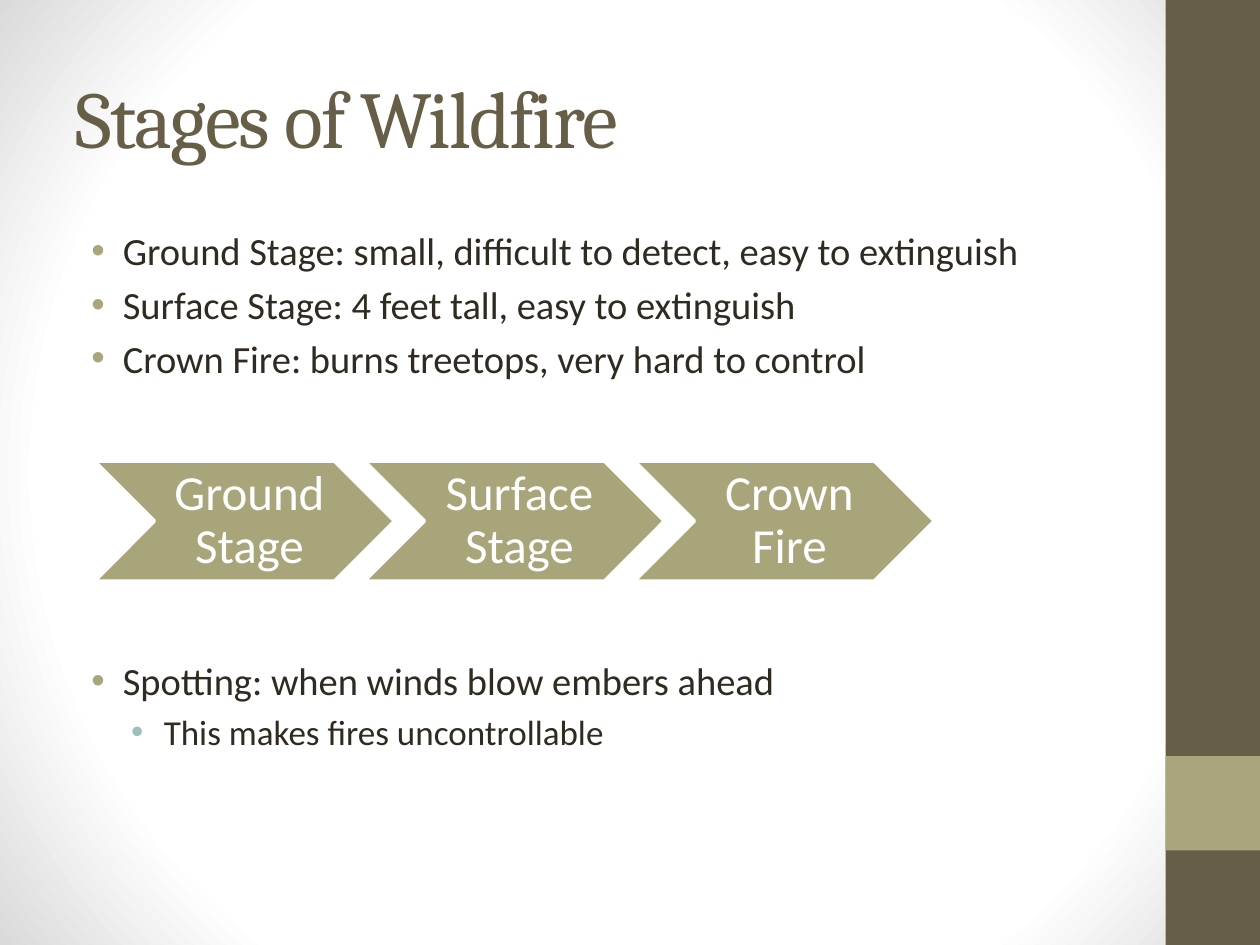
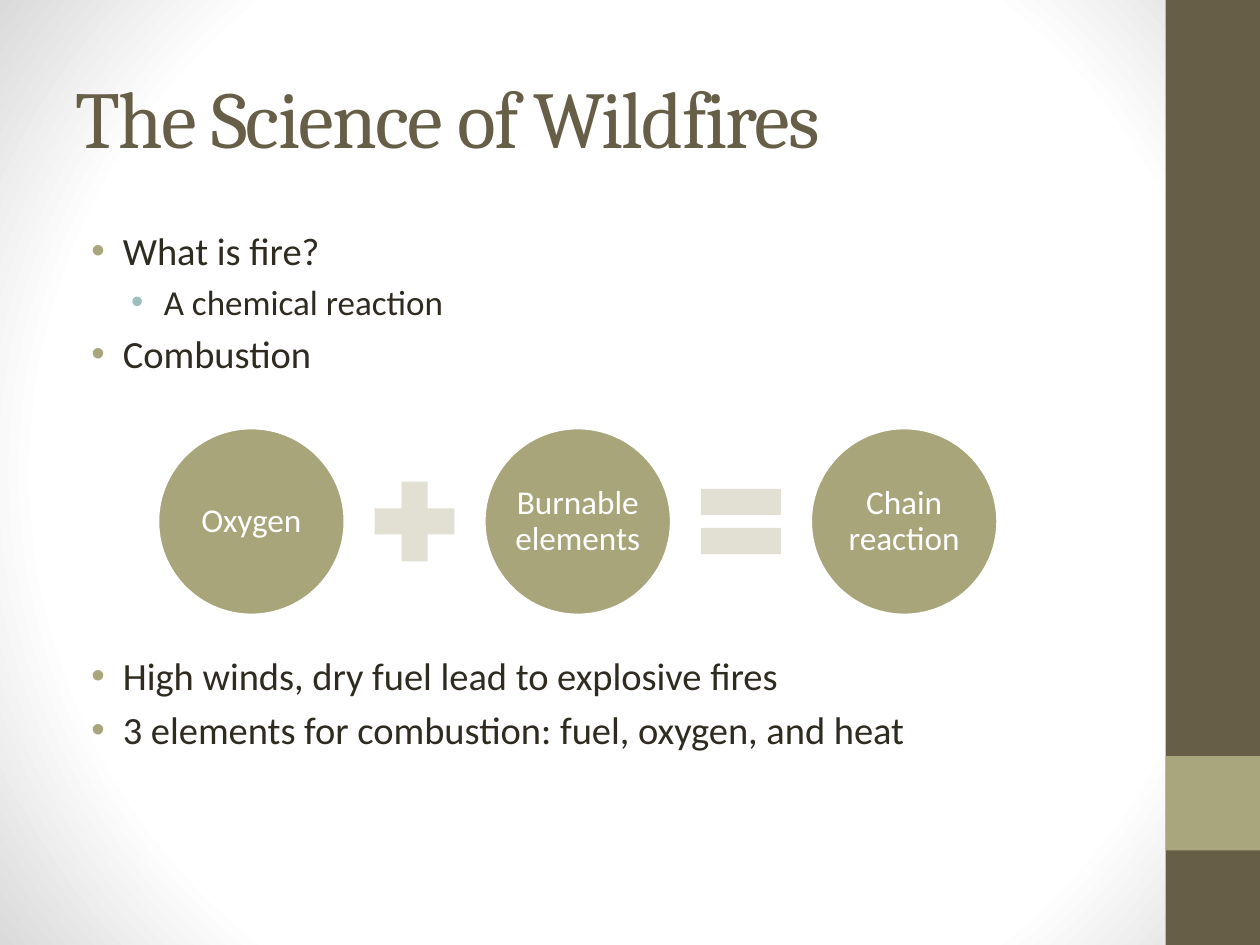
from dataclasses import dataclass

from lxml import etree
from pptx import Presentation
from pptx import util as u
from pptx.dml.color import RGBColor
from pptx.enum import shapes, text
from pptx.oxml import parse_xml
from pptx.oxml.ns import qn

Pt = u.Pt
Kind = shapes.MSO_SHAPE


@dataclass(frozen=True)
class Theme:
    brown: str = "675E47"
    olive: str = "A9A57C"
    diagram: str = "A9A57B"
    operator: str = "E2E0D2"
    ink: str = "2F2B20"
    white: str = "FFFFFF"
    edge_grey: str = "DADADA"
    bullet_colors: tuple = ("A9A57C", "9CBEBD")
    heading_font: str = "Cambria"
    body_font: str = "Calibri"
    title_size: float = 46
    list_sizes: tuple = (22, 20)
    chevron_size: float = 28
    circle_size: float = 19


THEME = Theme()
LIST_INDENTS = ((27, -18), (50.4, -18.7))  # left margin and first line, by level
DIAGRAM_GAP = 158  # space before the first list item below a diagram


def write(para, content, font=THEME.body_font, size=22, color=THEME.ink,
          align=text.PP_ALIGN.LEFT, before=0, after=0, line=1.0, tracking=0):
    """Add one formatted run to a paragraph; tracking is in points."""
    para.alignment = align
    para.space_before, para.space_after = Pt(before), Pt(after)
    para.line_spacing = line
    span = para.add_run()
    span.text = content
    span.font.name, span.font.size = font, Pt(size)
    span.font.color.rgb = RGBColor.from_string(color)
    if tracking:
        span.font._element.set("spc", str(tracking * 100))


def add_bullet(para, level):
    margin, indent = LIST_INDENTS[level]
    para.level = level
    props = para._p.get_or_add_pPr()
    props.set("marL", str(Pt(margin)))
    props.set("indent", str(Pt(indent)))
    color = etree.SubElement(props, qn("a:buClr"))
    etree.SubElement(color, qn("a:srgbClr"), val=THEME.bullet_colors[level])
    etree.SubElement(props, qn("a:buFont"), typeface="Arial")
    etree.SubElement(props, qn("a:buChar"), char="•")


class SlideBuilder:
    """Holds the theme, the deck and the page being built."""

    def __init__(self, theme):
        self.theme = theme
        self.deck = Presentation()
        self.deck.slide_width, self.deck.slide_height = Pt(720), Pt(540)
        self.layout = self.deck.slide_layouts[1]
        self.page = None
        self.place_layout()
        self.paint_background()

    def place_layout(self):
        for index, (top, height) in enumerate([(21.6, 90), (126, 378)]):
            holder = self.layout.placeholders[index]
            holder.left, holder.top = Pt(36), Pt(top)
            holder.width, holder.height = Pt(600), Pt(height)

    def paint_background(self):
        """Give the master a white circular gradient with grey corners."""
        fill = self.deck.slide_master.background.fill
        fill.solid()
        stops = [(0, self.theme.white), (75, self.theme.white), (100, self.theme.edge_grey)]
        stop_xml = "".join(f'<a:gs pos="{percent * 1000}"><a:srgbClr val="{color}"/></a:gs>'
                           for percent, color in stops)
        gradient = parse_xml(
            '<a:gradFill xmlns:a="http://schemas.openxmlformats.org/drawingml/2006/main"'
            f' rotWithShape="1"><a:gsLst>{stop_xml}</a:gsLst><a:path path="circle">'
            '<a:fillToRect l="50000" t="50000" r="50000" b="50000"/></a:path></a:gradFill>')
        solid = self.deck.slide_master.element.find(".//" + qn("p:bgPr")).find(qn("a:solidFill"))
        solid.getparent().replace(solid, gradient)

    def add_master_bands(self):
        """Draw the side bands, then move them behind everything on the master."""
        bands = [self.shape(Kind.RECTANGLE, 666, 0, 54, 540, self.theme.brown),
                 self.shape(Kind.RECTANGLE, 666, 432, 54, 54, self.theme.olive)]
        for position, band in enumerate(bands, start=2):
            self.deck.slide_master.shapes.element.insert(position, band._element)

    def new_page(self, title):
        first = self.page is None
        self.page = self.deck.slides.add_slide(self.layout)
        if first:
            self.add_master_bands()
        frame = self.page.shapes.title.text_frame
        frame.vertical_anchor = text.MSO_ANCHOR.MIDDLE
        frame.auto_size = text.MSO_AUTO_SIZE.NONE
        write(frame.paragraphs[0], title, font=self.theme.heading_font,
              size=self.theme.title_size, color=self.theme.brown, tracking=-1)

    def bullets(self, above, below):
        """Fill the body with (level, text) items around the diagram."""
        frame = self.page.placeholders[1].text_frame
        frame.auto_size = text.MSO_AUTO_SIZE.NONE
        for index, (level, content) in enumerate(above + below):
            para = frame.paragraphs[0] if index == 0 else frame.add_paragraph()
            size = self.theme.list_sizes[level]
            before = DIAGRAM_GAP if index == len(above) else size * 0.2
            write(para, content, size=size, before=before if index else 0)
            add_bullet(para, level)

    def shape(self, kind, left, top, width, height, fill, outline=None, adjustments=()):
        box = self.page.shapes.add_shape(kind, Pt(left), Pt(top), Pt(width), Pt(height))
        box.shadow.inherit = False
        box.fill.solid()
        box.fill.fore_color.rgb = RGBColor.from_string(fill)
        if outline:
            box.line.color.rgb = RGBColor.from_string(outline)
            box.line.width = Pt(2)
        else:
            box.line.fill.background()
        for index, value in enumerate(adjustments):
            box.adjustments[index] = value
        return box

    def label(self, box, content, size, insets):
        frame = box.text_frame
        frame.word_wrap = True
        frame.vertical_anchor = text.MSO_ANCHOR.MIDDLE
        frame.margin_left, frame.margin_top, frame.margin_right, frame.margin_bottom = map(Pt, insets)
        write(frame.paragraphs[0], content, size=size, color=self.theme.white,
              align=text.PP_ALIGN.CENTER, after=size * 0.35, line=0.9)

    def chevrons(self, labels, left=54, top=263.5, width=171.4, height=68.5):
        for index, content in enumerate(labels):
            box = self.shape(Kind.CHEVRON, left + index * width * 0.9, top, width, height,
                             self.theme.diagram, self.theme.white, [0.5])
            self.label(box, content, self.theme.chevron_size, (8.6, 2.9, 2.9, 2.9))

    def equation(self, labels, operators, left=90, middle=298, circle=107.3, sign=62, gap=8.6):
        """Draw circles in a row with an operator sign between neighbours."""
        pitch = circle + sign + 2 * gap
        for index, content in enumerate(labels):
            box = self.shape(Kind.OVAL, left + index * pitch, middle - circle / 2,
                             circle, circle, self.theme.diagram, self.theme.white)
            self.label(box, content, self.theme.circle_size, (1.5,) * 4)
        for index, (kind, adjustments) in enumerate(operators):
            self.shape(kind, left + index * pitch + circle + gap, middle - sign / 2,
                       sign, sign, self.theme.operator, adjustments=adjustments)


def main():
    builder = SlideBuilder(THEME)

    builder.new_page("Stages of Wildfire")
    builder.bullets(
        above=[(0, "Ground Stage: small, difficult to detect, easy to extinguish"),
               (0, "Surface Stage: 4 feet tall, easy to extinguish"),
               (0, "Crown Fire: burns treetops, very hard to control")],
        below=[(0, "Spotting: when winds blow embers ahead"),
               (1, "This makes fires uncontrollable")])
    builder.chevrons(["Ground Stage", "Surface Stage", "Crown Fire"])

    builder.new_page("The Science of Wildfires")
    builder.bullets(
        above=[(0, "What is fire?"),
               (1, "A chemical reaction"),
               (0, "Combustion")],
        below=[(0, "High winds, dry fuel lead to explosive fires"),
               (0, "3 elements for combustion: fuel, oxygen, and heat")])
    builder.equation(["Oxygen", "Burnable elements", "Chain reaction"],
                     [(Kind.MATH_PLUS, [0.24]), (Kind.MATH_EQUAL, [0.24, 0.12])])

    builder.deck.save("out.pptx")


if __name__ == "__main__":
    main()
